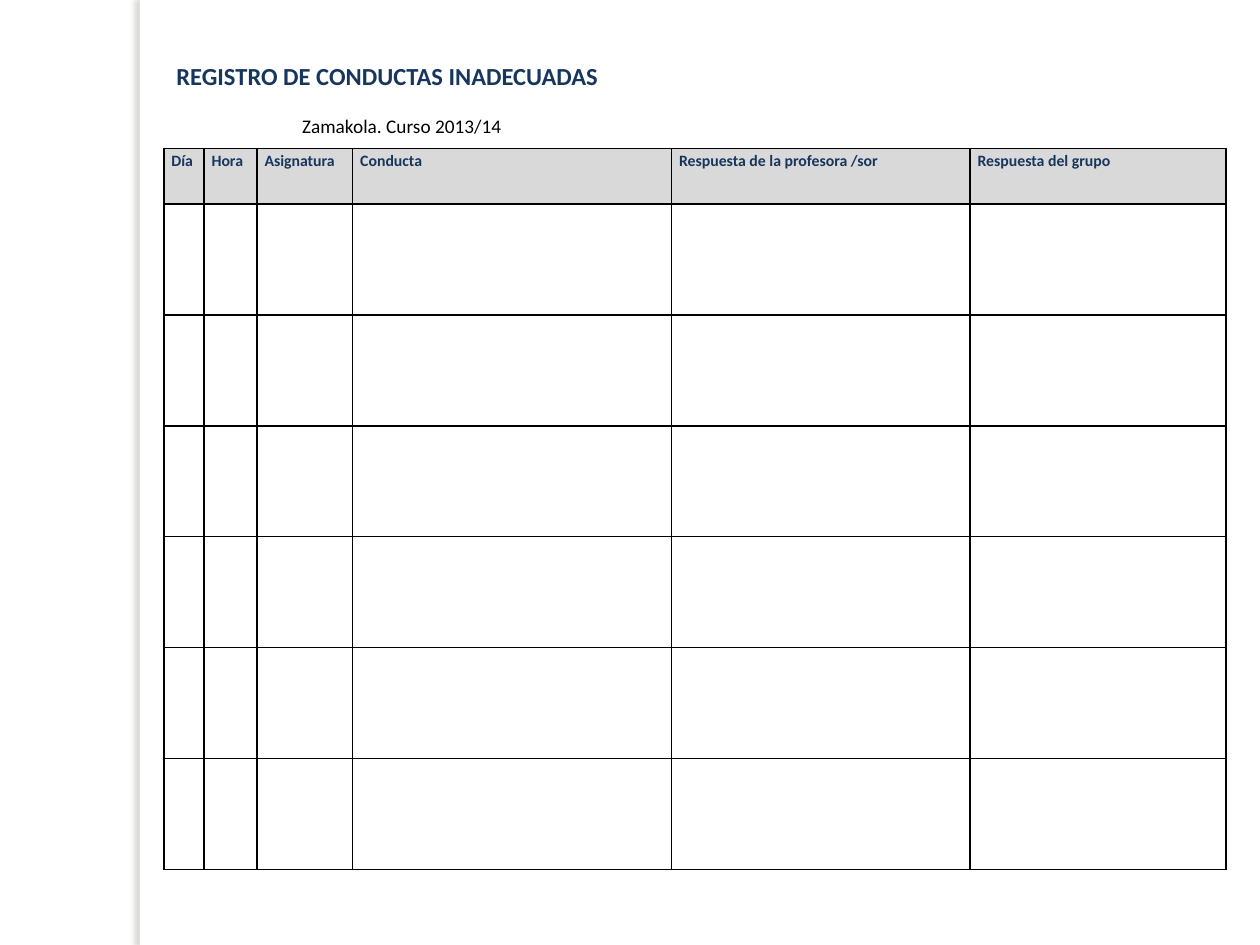
from pptx import Presentation
from pptx.dml.color import RGBColor
from pptx.enum.shapes import MSO_SHAPE
from pptx.enum.text import MSO_ANCHOR, PP_ALIGN
from pptx.oxml import parse_xml
from pptx.oxml.ns import nsdecls, qn
from pptx.util import Inches, Pt

NAVY = RGBColor(0x17, 0x36, 0x5D)
BLACK = RGBColor(0, 0, 0)
WHITE = RGBColor(0xFF, 0xFF, 0xFF)
GRAY = RGBColor(0xD9, 0xD9, 0xD9)
SHADOW = RGBColor(0x73, 0x6F, 0x63)

COLUMNS = [
    ("Día", 0.32),
    ("Hora", 0.42),
    ("Asignatura", 0.76),
    ("Conducta", 2.53),
    ("Respuesta de la profesora /sor", 2.37),
    ("Respuesta del grupo", 2.03),
]
BLANK_ROWS = 6
HEADER_HEIGHT = 0.44
ROW_HEIGHT = 0.88


class SlideBuilder:
    """Holds the font and current slide, and draws each kind of element."""

    def __init__(self, slide, font="Calibri"):
        self.slide = slide
        self.font = font

    def add_text(self, tf, text, size, color, bold=False):
        p = tf.paragraphs[0]
        p.alignment = PP_ALIGN.LEFT
        r = p.add_run()
        r.text = text
        r.font.name = self.font
        r.font.size = Pt(size)
        r.font.bold = bold
        r.font.color.rgb = color
        return p

    def title(self, text, left, top, width, height):
        sp = self.slide.shapes.title
        sp.left, sp.top = Inches(left), Inches(top)
        sp.width, sp.height = Inches(width), Inches(height)
        sp.text_frame.vertical_anchor = MSO_ANCHOR.MIDDLE
        self.add_text(sp.text_frame, text, 14, NAVY, bold=True)

    def text(self, text, left, top, width, height):
        sp = self.slide.shapes.add_textbox(
            Inches(left), Inches(top), Inches(width), Inches(height))
        tf = sp.text_frame
        tf.word_wrap = True
        tf.vertical_anchor = MSO_ANCHOR.MIDDLE
        self.add_text(tf, text, 11, BLACK)

    def band(self, left, top, width, height):
        sp = self.slide.shapes.add_shape(
            MSO_SHAPE.RECTANGLE,
            Inches(left), Inches(top), Inches(width), Inches(height))
        sp.fill.solid()
        sp.fill.fore_color.rgb = WHITE
        sp.line.fill.background()
        sp.shadow.inherit = False
        sp._element.spPr.find(qn("a:effectLst")).append(parse_xml(
            f'<a:outerShdw {nsdecls("a")} blurRad="{Pt(3)}" dist="{Pt(3)}" '
            f'dir="10800000" algn="tl" rotWithShape="0"><a:srgbClr val="{SHADOW}">'
            '<a:alpha val="25000"/></a:srgbClr></a:outerShdw>'))

    def borders(self, cell):
        tcPr = cell._tc.get_or_add_tcPr()
        for side in ("lnL", "lnR", "lnT", "lnB"):
            tcPr.append(parse_xml(
                f'<a:{side} {nsdecls("a")} w="{Pt(1)}"><a:solidFill>'
                f'<a:srgbClr val="{BLACK}"/></a:solidFill></a:{side}>'))

    def header(self, cell, text):
        cell.fill.solid()
        cell.fill.fore_color.rgb = GRAY
        cell.margin_left = cell.margin_right = Inches(0.06)
        cell.margin_top = cell.margin_bottom = 0
        p = self.add_text(cell.text_frame, text, 9, NAVY, bold=True)
        p.line_spacing = 1.15

    def table(self, left, top, columns, blank_rows):
        width = sum(w for _, w in columns)
        height = HEADER_HEIGHT + blank_rows * ROW_HEIGHT
        table = self.slide.shapes.add_table(
            blank_rows + 1, len(columns),
            Inches(left), Inches(top), Inches(width), Inches(height)).table
        table.first_row = table.horz_banding = False
        for i, row in enumerate(table.rows):
            row.height = Inches(ROW_HEIGHT if i else HEADER_HEIGHT)
            for cell in row.cells:
                self.borders(cell)
                if i:
                    cell.fill.background()
        for i, (label, col_width) in enumerate(columns):
            table.columns[i].width = Inches(col_width)
            self.header(table.cell(0, i), label)


def main():
    prs = Presentation()
    prs.slide_width, prs.slide_height = Inches(10), Inches(7.5)
    s = SlideBuilder(prs.slides.add_slide(prs.slide_layouts[5]))
    s.band(1.11, 0, 0.08, 7.5)
    s.table(1.3, 1.18, COLUMNS, BLANK_ROWS)
    s.title("REGISTRO DE CONDUCTAS INADECUADAS", 1.3, 0.4, 8.43, 0.4)
    s.text("Zamakola. Curso 2013/14", 2.3, 0.85, 4, 0.3)
    prs.save("out.pptx")


if __name__ == "__main__":
    main()
